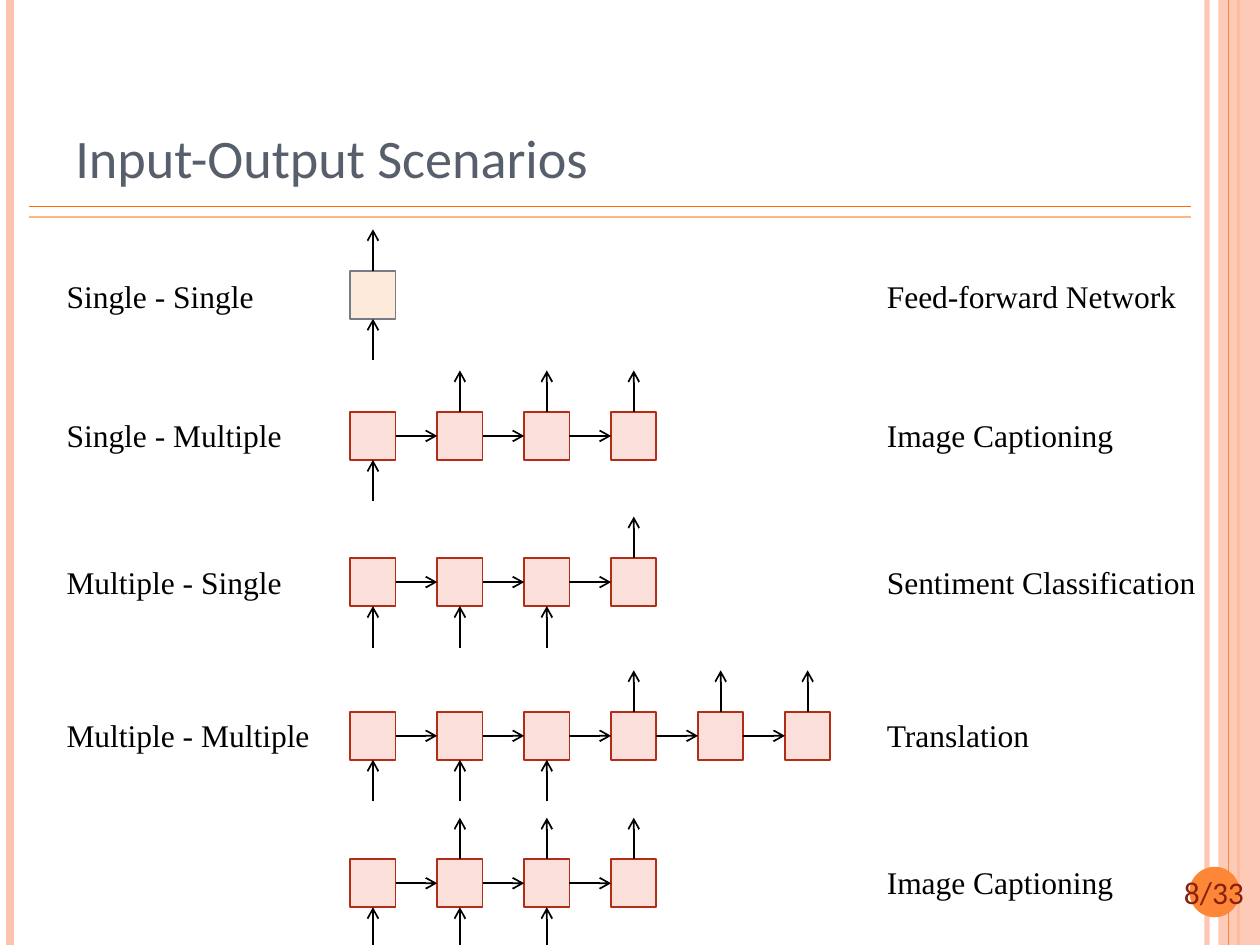
from dataclasses import dataclass
from typing import Optional

import pptx
import pptx.dml.color
import pptx.enum.shapes
import pptx.enum.text
import pptx.oxml.ns
import pptx.util
from lxml import etree

RGBColor = pptx.dml.color.RGBColor
Inches = pptx.util.Inches
MSO_SHAPE = pptx.enum.shapes.MSO_SHAPE
PP_ALIGN = pptx.enum.text.PP_ALIGN
MSO_ANCHOR = pptx.enum.text.MSO_ANCHOR
qn = pptx.oxml.ns.qn

BLACK = RGBColor(0x00, 0x00, 0x00)
SLATE = RGBColor(0x57, 0x5F, 0x6D)
GRAY = RGBColor(0x77, 0x7C, 0x84)
PEACH = RGBColor(0xFE, 0xC3, 0xAE)
ORANGE = RGBColor(0xFE, 0x86, 0x37)
DEEP_ORANGE = RGBColor(0xFF, 0x6B, 0x0A)
PALE_ORANGE = RGBColor(0xFE, 0xB6, 0x87)
SAND = RGBColor(0xFA, 0xC0, 0x90)
ROSE = RGBColor(0xF1, 0x9E, 0x91)
RED = RGBColor(0xB3, 0x2C, 0x16)
MAROON = RGBColor(0x86, 0x21, 0x10)

# Slide and diagram grid, in inches
WIDTH, HEIGHT = 10, 7.5
GRID_LEFT, COLUMN_PITCH = 2.78, 0.69
CELL_WIDTH, CELL_HEIGHT = 0.36, 0.38
ARROW_LENGTH = 0.33
LABEL_LEFT, LABEL_WIDTH = 0.43, 2.36
TASK_LEFT, TASK_WIDTH = 6.94, 3.26
LABEL_HEIGHT = 0.4


@dataclass
class Rule:
    start: tuple[float, float]
    end: tuple[float, float]
    color: RGBColor
    weight: float
    opacity: Optional[int] = None


@dataclass
class Scenario:
    top: float
    label_top: float
    label: str
    task: str
    cells: int
    inputs: range
    outputs: range
    fill: RGBColor = ROSE
    outline: RGBColor = RED


def vertical(x: float, color: RGBColor, weight: float, opacity: Optional[int] = None) -> Rule:
    return Rule((x, 0), (x, HEIGHT), color, weight, opacity)


def horizontal(y: float, color: RGBColor) -> Rule:
    return Rule((0.23, y), (9.45, y), color, 1)


BACK_RULES = [
    vertical(9.58, PEACH, 3, 93),
    vertical(0.08, PEACH, 4.5),
    vertical(9.83, ORANGE, 1.5),
]
FRONT_RULES = [
    vertical(9.75, ORANGE, 0.75),
    horizontal(1.64, DEEP_ORANGE),
    horizontal(1.72, PALE_ORANGE),
]
SCENARIOS = [
    Scenario(2.15, 2.15, "Single - Single", "Feed-forward Network",
             1, range(1), range(1), SAND, GRAY),
    Scenario(3.27, 3.25, "Single - Multiple", "Image Captioning", 4, range(1), range(1, 4)),
    Scenario(4.43, 4.42, "Multiple - Single", "Sentiment Classification",
             4, range(3), range(3, 4)),
    Scenario(5.65, 5.63, "Multiple - Multiple", "Translation", 6, range(3), range(3, 6)),
    Scenario(6.82, 6.8, "", "Image Captioning", 4, range(3), range(1, 4)),
]


def set_opacity(properties, percent: int) -> None:
    color = properties.find(".//" + qn("a:srgbClr"))
    etree.SubElement(color, qn("a:alpha")).set("val", str(percent * 1000))


def add_line(slide, rule: Rule, arrow: bool = False):
    connector = slide.shapes.add_connector(
        pptx.enum.shapes.MSO_CONNECTOR.STRAIGHT,
        *(Inches(value) for value in rule.start + rule.end))
    connector.line.color.rgb = rule.color
    connector.line.width = pptx.util.Pt(rule.weight)
    properties = connector._element.spPr
    if rule.opacity is not None:
        set_opacity(properties, rule.opacity)
    if arrow:
        etree.SubElement(properties.find(qn("a:ln")), qn("a:tailEnd")).set("type", "arrow")
    etree.SubElement(properties, qn("a:effectLst"))
    return connector


def add_arrow(slide, start: tuple[float, float], end: tuple[float, float]):
    return add_line(slide, Rule(start, end, BLACK, 1), arrow=True)


def add_block(slide, kind, box: tuple, fill: RGBColor,
              outline: Optional[RGBColor] = None, opacity: Optional[int] = None):
    shape = slide.shapes.add_shape(kind, *(Inches(value) for value in box))
    shape.shadow.inherit = False
    shape.fill.solid()
    shape.fill.fore_color.rgb = fill
    if opacity is not None:
        set_opacity(shape._element.spPr, opacity)
    if outline is None:
        shape.line.fill.background()
    else:
        shape.line.color.rgb = outline
        shape.line.width = pptx.util.Pt(1)
    return shape


def add_text(slide, box: tuple, text: str, size: float = 18, name: str = "Times New Roman",
             color: RGBColor = BLACK, align=PP_ALIGN.LEFT, anchor=MSO_ANCHOR.TOP) -> None:
    frame = slide.shapes.add_textbox(*(Inches(value) for value in box)).text_frame
    for attribute, value in {"word_wrap": True, "vertical_anchor": anchor}.items():
        setattr(frame, attribute, value)
    paragraph = frame.paragraphs[0]
    paragraph.alignment = align
    run = paragraph.add_run()
    run.text = text
    for attribute, value in {"size": pptx.util.Pt(size), "name": name}.items():
        setattr(run.font, attribute, value)
    run.font.color.rgb = color


def add_scenario(slide, scenario: Scenario) -> None:
    top, bottom = scenario.top, scenario.top + CELL_HEIGHT
    middle = top + CELL_HEIGHT / 2
    previous = None
    for column in range(scenario.cells):
        left = GRID_LEFT + column * COLUMN_PITCH
        center = left + CELL_WIDTH / 2
        cell = add_block(slide, MSO_SHAPE.RECTANGLE, (left, top, CELL_WIDTH, CELL_HEIGHT),
                         scenario.fill, scenario.outline, 33)
        if previous is not None:
            step = add_arrow(slide, (left - ARROW_LENGTH, middle), (left, middle))
            step.begin_connect(previous, 3)
            step.end_connect(cell, 1)
        if column in scenario.inputs:
            arrow = add_arrow(slide, (center, bottom + ARROW_LENGTH), (center, bottom))
            arrow.end_connect(cell, 2)
        if column in scenario.outputs:
            arrow = add_arrow(slide, (center, top), (center, top - ARROW_LENGTH))
            arrow.begin_connect(cell, 0)
        previous = cell
    for left, width, text in ((LABEL_LEFT, LABEL_WIDTH, scenario.label),
                              (TASK_LEFT, TASK_WIDTH, scenario.task)):
        if text:
            add_text(slide, (left, scenario.label_top, width, LABEL_HEIGHT), text)


def main() -> None:
    presentation = pptx.Presentation()
    presentation.slide_width = Inches(WIDTH)
    presentation.slide_height = Inches(HEIGHT)
    slide = presentation.slides.add_slide(presentation.slide_layouts[6])

    # Frame: side bands and title rules
    for rule in BACK_RULES:
        add_line(slide, rule)
    add_block(slide, MSO_SHAPE.RECTANGLE, (9.67, 0, 0.33, HEIGHT), PEACH, opacity=87)
    for rule in FRONT_RULES:
        add_line(slide, rule)

    # Page number badge
    add_block(slide, MSO_SHAPE.OVAL, (9.44, 6.88, 0.4, 0.4), ORANGE)
    add_text(slide, (9.18, 6.88, 0.91, 0.4), "8/33", name="Calibri", color=MAROON,
             align=PP_ALIGN.CENTER)

    # Title
    add_text(slide, (0.5, 0.3, 8.17, 1.25), "Input-Output Scenarios", 31, "Calibri", SLATE,
             anchor=MSO_ANCHOR.BOTTOM)

    # Network diagrams with their labels
    for scenario in SCENARIOS:
        add_scenario(slide, scenario)

    presentation.save("out.pptx")


if __name__ == "__main__":
    main()
